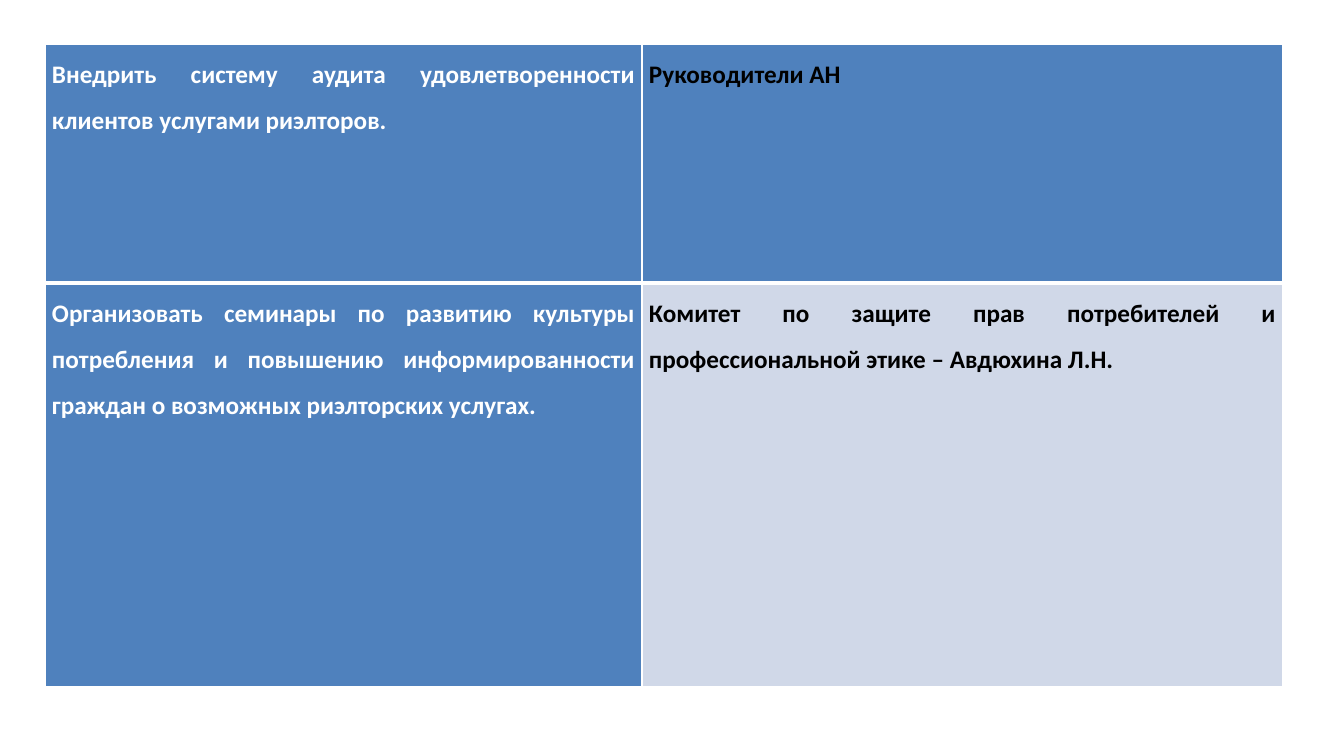
from lxml import etree
from pptx import Presentation
from pptx import util as u
from pptx.dml.color import RGBColor
from pptx.enum import text
from pptx.oxml.ns import qn

BLUE, PALE, WHITE, BLACK = "4F81BD", "D0D8E8", "FFFFFF", "000000"
SLIDE_WIDTH, SLIDE_HEIGHT = 1344, 756
EMU_PER_PX = 12192000 / SLIDE_WIDTH


def px(length):
    return u.Emu(round(length * EMU_PER_PX))


def color(hex_value):
    return RGBColor.from_string(hex_value)


def apply(target, values):
    for key, value in values.items():
        setattr(target, key, value)


class ActionPlan:
    """Hold the table style and the slide that receives the plan."""

    font = {"name": "Calibri", "size": u.Pt(18), "bold": True}
    paragraph = {"alignment": text.PP_ALIGN.JUSTIFY, "line_spacing": 1.5}
    margins = {"margin_left": px(7), "margin_right": px(7),
               "margin_top": 0, "margin_bottom": 0,
               "vertical_anchor": text.MSO_ANCHOR.TOP}

    def __init__(self, slide):
        self.slide = slide

    def border(self, cell, widths):
        properties = cell._tc.get_or_add_tcPr()
        for position, (side, points) in enumerate(widths.items()):
            line = etree.Element(qn(f"a:ln{side}"), w=str(u.Pt(points)))
            fill = etree.SubElement(line, qn("a:solidFill"))
            etree.SubElement(fill, qn("a:srgbClr"), val=WHITE)
            properties.insert(position, line)

    def cell(self, cell, wording, fill, ink, widths):
        apply(cell, {"text": wording, **self.margins})
        cell.fill.solid()
        cell.fill.fore_color.rgb = color(fill)
        line = cell.text_frame.paragraphs[0]
        apply(line, self.paragraph)
        apply(line.runs[0].font, self.font)
        line.runs[0].font.color.rgb = color(ink)
        self.border(cell, widths)

    def table(self, left, top, widths, heights, tasks):
        box = map(px, (left, top, sum(widths), sum(heights)))
        plan = self.slide.shapes.add_table(len(heights), len(widths), *box).table
        for column, width in zip(plan.columns, widths):
            column.width = px(width)
        for index, (height, task) in enumerate(zip(heights, tasks)):
            plan.rows[index].height = px(height)
            edges = {"L": 1, "R": 1, "T": 3 if index else 1,
                     "B": 1 if index else 3}
            for position, (wording, fill, ink) in enumerate(task):
                self.cell(plan.cell(index, position), wording, fill, ink, edges)


def main():
    deck = Presentation()
    apply(deck, {"slide_width": px(SLIDE_WIDTH), "slide_height": px(SLIDE_HEIGHT)})
    plan = ActionPlan(deck.slides.add_slide(deck.slide_layouts[6]))
    tasks = [
        [("Внедрить систему аудита удовлетворенности клиентов услугами риэлторов.",
          BLUE, WHITE),
         ("Руководители АН", BLUE, BLACK)],
        [("Организовать семинары по развитию культуры потребления и повышению "
          "информированности граждан о возможных риэлторских услугах.",
          BLUE, WHITE),
         ("Комитет по защите прав потребителей и профессиональной этике – "
          "Авдюхина Л.Н.", PALE, BLACK)],
    ]
    plan.table(45, 44, [597, 641], [239, 404], tasks)
    deck.save("out.pptx")


if __name__ == "__main__":
    main()
